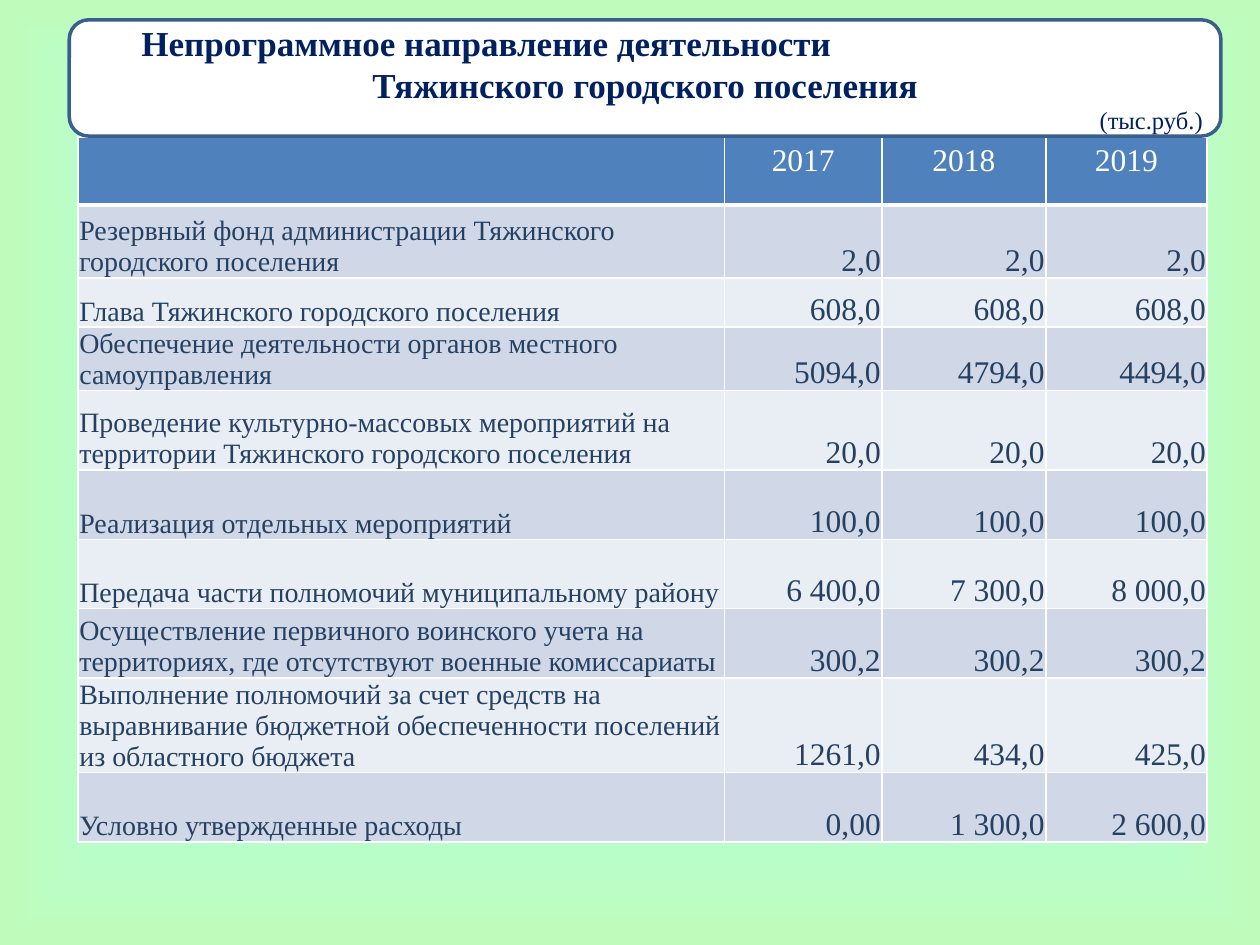
from dataclasses import dataclass
from typing import NamedTuple

from pptx import Presentation
from pptx.dml.color import RGBColor
from pptx.enum.shapes import MSO_SHAPE as Shape
from pptx.enum.text import MSO_ANCHOR as Anchor, PP_ALIGN as Align
from pptx.oxml import parse_xml
from pptx.util import Inches, Pt

NS = 'xmlns:a="http://schemas.openxmlformats.org/drawingml/2006/main"'
NS_P = 'xmlns:p="http://schemas.openxmlformats.org/presentationml/2006/main"'


@dataclass(frozen=True)
class Theme:
    font: str = "Times New Roman"
    title: str = "002060"
    body: str = "254061"
    white: str = "FFFFFF"
    outline: str = "3A5F8C"
    header: str = "4F81BD"
    bands: tuple = ("D0D8E8", "E9EDF4")
    gradient: tuple = ((3, "83FBA0", 100), (66, "B3FFD4", 52), (100, "BFFCBC", 100))
    title_size: int = 20
    value_size: int = 18
    label_size: int = 16
    unit_size: int = 14


class Row(NamedTuple):
    height: float
    label: str
    values: tuple


T = Theme()
WIDTH, HEIGHT = 10, 7.5
COLUMNS = (5.13, 1.25, 1.3, 1.28)
ROWS = (
    Row(0.54, "", ("2017", "2018", "2019")),
    Row(0.58, "Резервный фонд администрации Тяжинского городского поселения",
        ("2,0", "2,0", "2,0")),
    Row(0.39, "Глава Тяжинского городского поселения", ("608,0", "608,0", "608,0")),
    Row(0.48, "Обеспечение деятельности органов местного самоуправления",
        ("5094,0", "4794,0", "4494,0")),
    Row(0.63, "Проведение культурно-массовых мероприятий на территории "
        "Тяжинского городского поселения", ("20,0", "20,0", "20,0")),
    Row(0.55, "Реализация отдельных мероприятий", ("100,0", "100,0", "100,0")),
    Row(0.55, "Передача части полномочий муниципальному району",
        ("6 400,0", "7 300,0", "8 000,0")),
    Row(0.55, "Осуществление первичного воинского учета на территориях, "
        "где отсутствуют военные комиссариаты", ("300,2", "300,2", "300,2")),
    Row(0.55, "Выполнение полномочий за счет средств на выравнивание бюджетной "
        "обеспеченности поселений из областного бюджета",
        ("1261,0", "434,0", "425,0")),
    Row(0.55, "Условно утвержденные расходы", ("0,00", "1 300,0", "2 600,0")),
)


def rgb(color: str) -> RGBColor:
    return RGBColor.from_string(color)


def write(p, text: str, size: int, color: str, align: Align, bold: bool = False) -> None:
    p.text, p.alignment = text, align
    p.font.name, p.font.size, p.font.bold = T.font, Pt(size), bold
    p.font.color.rgb = rgb(color)


def paint_background(s) -> None:
    stops = "".join(
        f'<a:gs pos="{pos * 1000}"><a:srgbClr val="{color}">'
        f'<a:alpha val="{alpha * 1000}"/></a:srgbClr></a:gs>'
        for pos, color, alpha in T.gradient)
    s._element.cSld.insert(0, parse_xml(
        f'<p:bg {NS} {NS_P}><p:bgPr><a:gradFill><a:gsLst>{stops}</a:gsLst>'
        '<a:path path="rect"><a:fillToRect l="50000" t="50000" r="50000" b="50000"/>'
        '</a:path></a:gradFill><a:effectLst/></p:bgPr></p:bg>'))


def set_borders(cell, bottom: int) -> None:
    widths = {"lnL": 1, "lnR": 1, "lnT": 1, "lnB": bottom}
    for i, (side, width) in enumerate(widths.items()):
        cell._tc.get_or_add_tcPr().insert(i, parse_xml(
            f'<a:{side} {NS} w="{Pt(width)}"><a:solidFill>'
            f'<a:srgbClr val="{T.white}"/></a:solidFill></a:{side}>'))


def fill_cell(cell, text: str, row: int, col: int) -> None:
    is_header = row == 0
    cell.fill.solid()
    cell.fill.fore_color.rgb = rgb(T.header if is_header else T.bands[(row - 1) % 2])
    set_borders(cell, bottom=3 if is_header or row == 0 else 1)
    p = cell.text_frame.paragraphs[0]
    if is_header:
        write(p, text, T.value_size, T.white, Align.CENTER)
        return
    cell.vertical_anchor = Anchor.BOTTOM
    cell.margin_left = cell.margin_right = cell.margin_top = Inches(0.01)
    cell.margin_bottom = 0
    if col == 0:
        write(p, text, T.label_size, T.body, Align.LEFT)
    else:
        write(p, text, T.value_size, T.body, Align.RIGHT)


def add_budget_table(s) -> None:
    heights = [row.height for row in ROWS]
    table = s.shapes.add_table(
        len(ROWS), len(COLUMNS), Inches(0.062 * WIDTH), Inches(0.145 * HEIGHT),
        Inches(sum(COLUMNS)), Inches(sum(heights))).table
    for column, width in zip(table.columns, COLUMNS):
        column.width = Inches(width)
    for i, row in enumerate(ROWS):
        table.rows[i].height = Inches(row.height)
        for j, text in enumerate((row.label, *row.values)):
            fill_cell(table.cell(i, j), text, i, j)


def add_title(s) -> None:
    sp = s.shapes.add_shape(
        Shape.ROUNDED_RECTANGLE, Inches(0.055 * WIDTH), Inches(0.021 * HEIGHT),
        Inches(0.914 * WIDTH), Inches(0.123 * HEIGHT))
    sp.shadow.inherit = False
    sp.fill.solid()
    sp.fill.fore_color.rgb = rgb(T.white)
    sp.line.color.rgb = rgb(T.outline)
    sp.line.width = Pt(2)
    tf = sp.text_frame
    tf.word_wrap, tf.vertical_anchor = True, Anchor.MIDDLE
    first = tf.paragraphs[0]
    write(first, "Непрограммное направление деятельности",
          T.title_size, T.title, Align.LEFT, bold=True)
    first._p.get_or_add_pPr().set("marL", str(Inches(0.43)))
    write(tf.add_paragraph(), "Тяжинского городского поселения",
          T.title_size, T.title, Align.CENTER, bold=True)
    write(tf.add_paragraph(), "(тыс.руб.)", T.unit_size, T.title, Align.RIGHT)


def main() -> None:
    prs = Presentation()
    prs.slide_width, prs.slide_height = Inches(WIDTH), Inches(HEIGHT)
    s = prs.slides.add_slide(prs.slide_layouts[6])
    paint_background(s)
    add_budget_table(s)
    add_title(s)
    prs.save("out.pptx")


if __name__ == "__main__":
    main()
